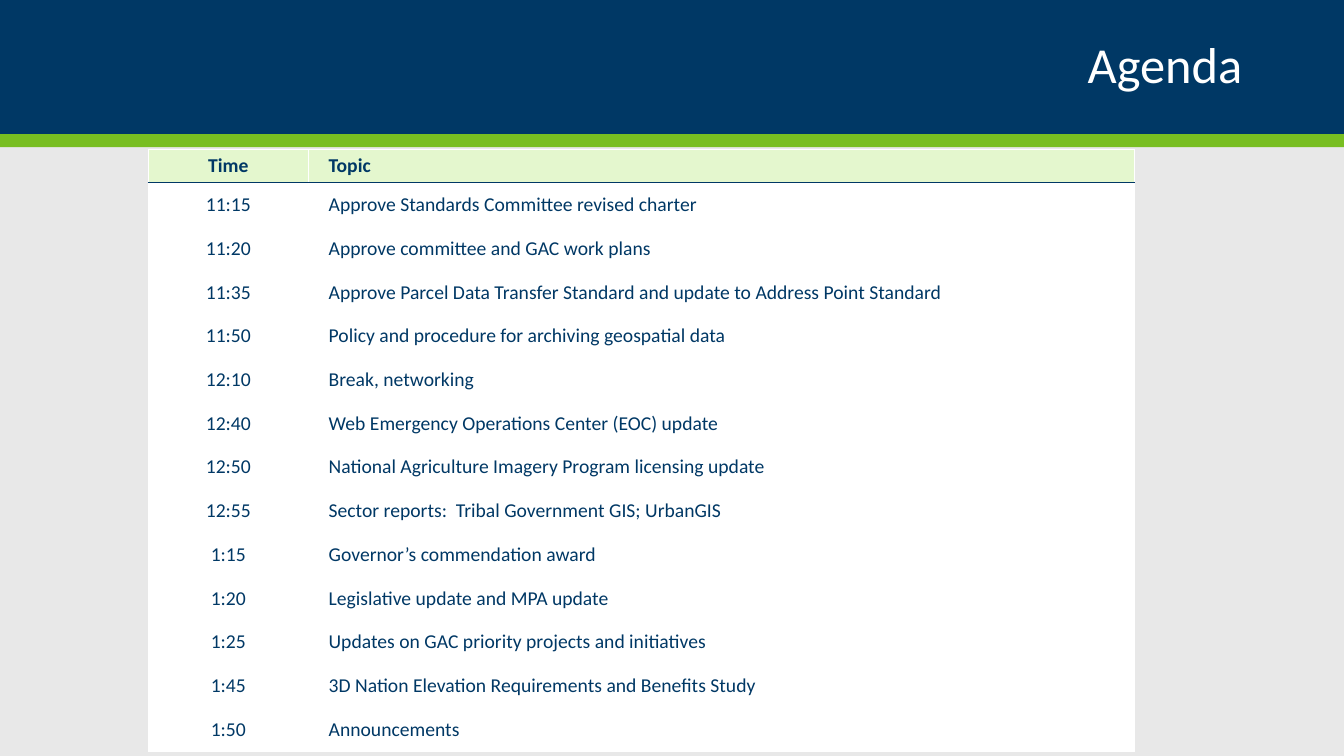
from dataclasses import dataclass

from lxml import etree
from pptx import Presentation
from pptx import util as u
from pptx.dml.color import RGBColor
from pptx.enum import shapes, text
from pptx.oxml.ns import qn


@dataclass(frozen=True)
class Theme:
    font: str = "Calibri"
    navy: str = "003865"
    green: str = "78BE21"
    pale: str = "E4F7CE"
    white: str = "FFFFFF"
    gray: str = "E8E8E8"
    title: int = 36
    body: int = 14


HEAD = ("Time", "Topic")
ITEMS = [
    ("11:15", "Approve Standards Committee revised charter"),
    ("11:20", "Approve committee and GAC work plans"),
    ("11:35", "Approve Parcel Data Transfer Standard and update to Address Point Standard"),
    ("11:50", "Policy and procedure for archiving geospatial data"),
    ("12:10", "Break, networking"),
    ("12:40", "Web Emergency Operations Center (EOC) update"),
    ("12:50", "National Agriculture Imagery Program licensing update"),
    ("12:55", "Sector reports:  Tribal Government GIS; UrbanGIS"),
    ("1:15", "Governor’s commendation award"),
    ("1:20", "Legislative update and MPA update"),
    ("1:25", "Updates on GAC priority projects and initiatives"),
    ("1:45", "3D Nation Elevation Requirements and Benefits Study"),
    ("1:50", "Announcements"),
]


def paint(fill, color):
    fill.solid()
    fill.fore_color.rgb = RGBColor.from_string(color)


class Deck:
    def __init__(self, theme):
        self.theme = theme
        self.prs = Presentation()
        self.prs.slide_width = u.Inches(13.33)
        self.prs.slide_height = u.Inches(7.5)
        self.slide = self.prs.slides.add_slide(self.prs.slide_layouts[6])
        paint(self.slide.background.fill, theme.gray)

    def style(self, para, size, color, align, bold=False):
        para.alignment = align
        para.font.name = self.theme.font
        para.font.size = u.Pt(size)
        para.font.bold = bold
        para.font.color.rgb = RGBColor.from_string(color)

    def band(self, top, height, color):
        """Add a full-width bar."""
        bar = self.slide.shapes.add_shape(
            shapes.MSO_SHAPE.RECTANGLE, 0, u.Inches(top),
            self.prs.slide_width, u.Inches(height))
        bar.shadow.inherit = False
        paint(bar.fill, color)
        bar.line.fill.background()

    def title(self, words, left, top, width, height):
        box = self.slide.shapes.add_textbox(*map(u.Inches, (left, top, width, height)))
        frame = box.text_frame
        frame.word_wrap = True
        frame.vertical_anchor = text.MSO_ANCHOR.MIDDLE
        para = frame.paragraphs[0]
        para.text = words
        para.line_spacing = 0.9
        self.style(para, self.theme.title, self.theme.white, text.PP_ALIGN.RIGHT)

    def border(self, cell, side):
        """Draw one edge of a cell; side is "T" or "B"."""
        props = cell._tc.get_or_add_tcPr()
        line = etree.Element(qn(f"a:ln{side}"), w=str(u.Pt(1)))
        fill = etree.SubElement(line, qn("a:solidFill"))
        etree.SubElement(fill, qn("a:srgbClr"), val=self.theme.navy)
        props.insert(0, line)

    def cell(self, cell, words, head, first):
        cell.text = words
        cell.vertical_anchor = text.MSO_ANCHOR.MIDDLE
        cell.margin_left = u.Inches(0.1 if first else 0.2)
        cell.margin_right = u.Inches(0.1)
        cell.margin_top = cell.margin_bottom = u.Inches(0.05 if head else 0.1)
        align = text.PP_ALIGN.CENTER if first else text.PP_ALIGN.LEFT
        self.style(cell.text_frame.paragraphs[0], self.theme.body,
                   self.theme.navy, align, head)
        paint(cell.fill, self.theme.pale if head else self.theme.white)

    def table(self, rows, left, top, widths, tall, step):
        """Add a table with a header row of height tall and rows of height step."""
        height = tall + step * (len(rows) - 1)
        grid = self.slide.shapes.add_table(
            len(rows), len(widths),
            *map(u.Inches, (left, top, sum(widths), height))).table
        grid.horz_banding = False
        for col, width in zip(grid.columns, widths):
            col.width = u.Inches(width)
        for r, row in enumerate(rows):
            grid.rows[r].height = u.Inches(step if r else tall)
            for c, words in enumerate(row):
                cell = grid.cell(r, c)
                self.cell(cell, words, r == 0, c == 0)
                if r < 2:
                    self.border(cell, "T" if r else "B")


def main():
    theme = Theme()
    deck = Deck(theme)
    deck.band(0, 1.33, theme.navy)
    deck.band(1.33, 0.13, theme.green)
    deck.title("Agenda", 0.92, 0.17, 11.5, 1)
    deck.table([HEAD, *ITEMS], 1.47, 1.48, (1.59, 8.19), 0.33, 0.43)
    deck.prs.save("out.pptx")


if __name__ == "__main__":
    main()
